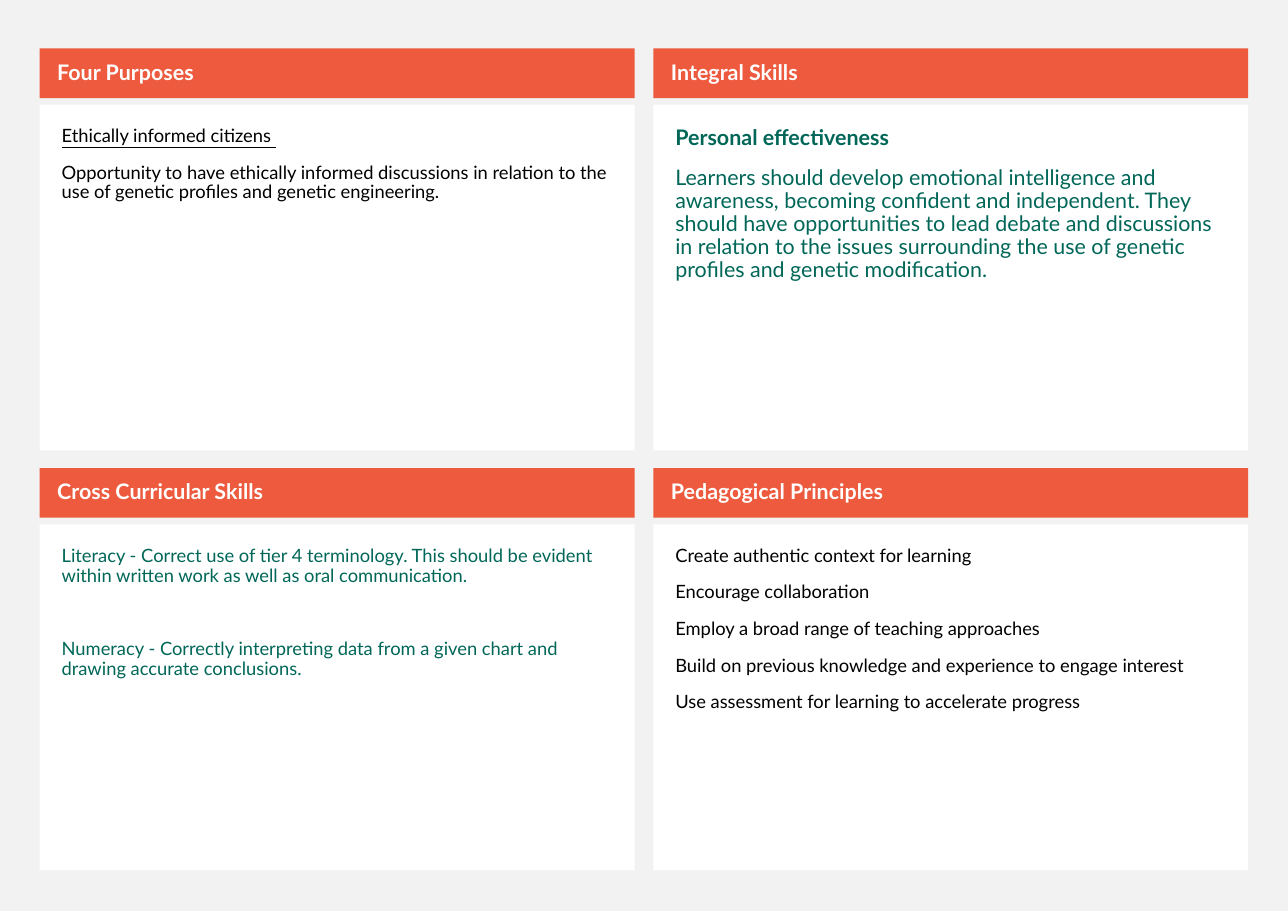
from pptx import Presentation
from pptx.dml.color import RGBColor
from pptx.enum import shapes, text
from pptx.util import Inches, Pt

PAGE_GREY = RGBColor(0xF2, 0xF2, 0xF2)
ORANGE = RGBColor(0xED, 0x5A, 0x3E)
WHITE = RGBColor(0xFF, 0xFF, 0xFF)
BLACK = RGBColor(0x00, 0x00, 0x00)
GREEN = RGBColor(0x00, 0x67, 0x58)

# Grid of two by two cards, in inches
LEFT, TOP = 0.36, 0.44
COLUMN_STEP, ROW_STEP = 5.57, 3.81
CARD_WIDTH, HEADING_HEIGHT, BODY_HEIGHT = 5.4, 0.45, 3.14
BODY_OFFSET = 0.51

# Cards by row: heading, text size, colour, paragraphs as (text, font and spacing options)
CARDS = [
    ("Four Purposes", 12, BLACK, [
        ("Ethically informed citizens ", {"underline": True}),
        ("Opportunity to have ethically informed discussions in relation to the "
         "use of genetic profiles and genetic engineering. ", {}),
    ]),
    ("Integral Skills", 14, GREEN, [
        ("Personal effectiveness", {"bold": True}),
        ("Learners should develop emotional intelligence and awareness, becoming "
         "confident and independent. They should have opportunities to lead debate "
         "and discussions in relation to the issues surrounding the use of genetic "
         "profiles and genetic modification. ", {}),
    ]),
    ("Cross Curricular Skills", 12, GREEN, [
        ("Literacy - Correct use of tier 4 terminology. This should be "
         "evident within written work as well as oral communication.", {}),
        ("Numeracy - Correctly interpreting data from a given chart and "
         "drawing accurate conclusions.", {"before": 35}),
    ]),
    ("Pedagogical Principles", 12, BLACK, [
        ("Create authentic context for learning", {}),
        ("Encourage collaboration", {}),
        ("Employ a broad range of teaching approaches", {}),
        ("Build on previous knowledge and experience to engage interest", {}),
        ("Use assessment for learning to accelerate progress", {}),
    ]),
]


def add_panel(slide, left, top, height, fill, anchor, margins):
    """Add a plain filled rectangle and return its text frame."""
    panel = slide.shapes.add_shape(
        shapes.MSO_SHAPE.RECTANGLE,
        Inches(left), Inches(top), Inches(CARD_WIDTH), Inches(height))
    panel.shadow.inherit = False
    panel.fill.solid()
    panel.fill.fore_color.rgb = fill
    panel.line.fill.background()
    frame = panel.text_frame
    frame.word_wrap = True
    frame.vertical_anchor = anchor
    (frame.margin_left, frame.margin_top,
     frame.margin_right, frame.margin_bottom) = map(Inches, margins)
    return frame


def write_paragraph(paragraph, words, size, color, bold=False, underline=False, before=11):
    paragraph.text = words
    paragraph.alignment = text.PP_ALIGN.LEFT
    paragraph.line_spacing = 0.9
    paragraph.space_before = Pt(before)
    font = paragraph.runs[0].font
    font.name = "Lato"
    font.size = Pt(size)
    font.color.rgb = color
    font.bold = bold
    font.underline = underline


def add_card(slide, left, top, heading, size, color, paragraphs):
    # Heading bar
    bar = add_panel(slide, left, top, HEADING_HEIGHT, ORANGE,
                    text.MSO_ANCHOR.MIDDLE, (0.16, 0.05, 0.1, 0.05))
    write_paragraph(bar.paragraphs[0], heading, 14, WHITE, bold=True)

    # Body
    body = add_panel(slide, left, top + BODY_OFFSET, BODY_HEIGHT, WHITE,
                     text.MSO_ANCHOR.TOP, (0.2, 0.2, 0.2, 0.2))
    for index, (words, options) in enumerate(paragraphs):
        paragraph = body.add_paragraph() if index else body.paragraphs[0]
        write_paragraph(paragraph, words, size, color, **options)


def main():
    deck = Presentation()
    deck.slide_width, deck.slide_height = Inches(11.69), Inches(8.27)
    slide = deck.slides.add_slide(deck.slide_layouts[6])
    slide.background.fill.solid()
    slide.background.fill.fore_color.rgb = PAGE_GREY

    for index, card in enumerate(CARDS):
        row, column = divmod(index, 2)
        add_card(slide, LEFT + column * COLUMN_STEP, TOP + row * ROW_STEP, *card)

    deck.save("out.pptx")


if __name__ == "__main__":
    main()
